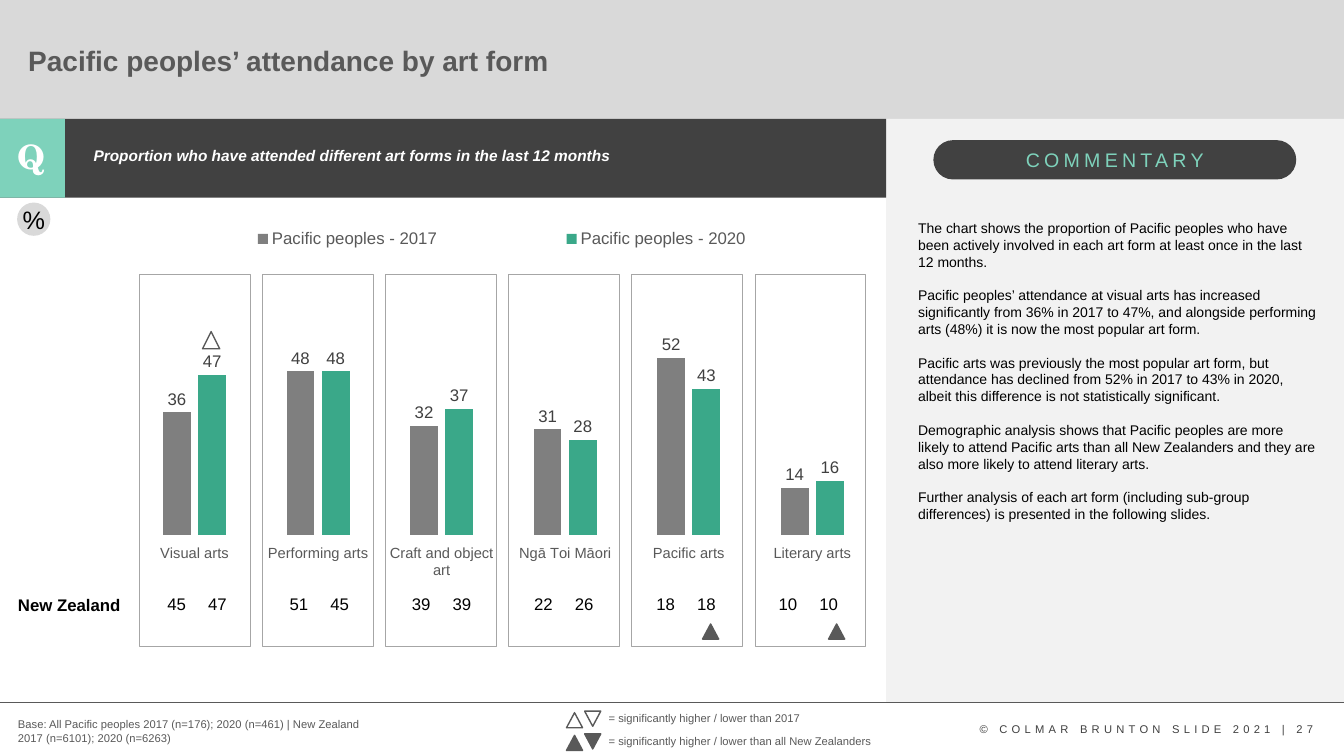
from dataclasses import dataclass

from lxml import etree
from pptx import Presentation
from pptx.chart.data import CategoryChartData
from pptx.dml.color import RGBColor
from pptx.enum.chart import XL_CHART_TYPE, XL_LABEL_POSITION, XL_LEGEND_POSITION, XL_TICK_LABEL_POSITION, XL_TICK_MARK
from pptx.enum.shapes import MSO_CONNECTOR, MSO_SHAPE
from pptx.enum.text import MSO_ANCHOR, PP_ALIGN
from pptx.oxml import parse_xml
from pptx.oxml.ns import nsdecls, qn
from pptx.util import Inches, Pt

RECT, OVAL = MSO_SHAPE.RECTANGLE, MSO_SHAPE.OVAL
PILL, TRIANGLE = MSO_SHAPE.ROUNDED_RECTANGLE, MSO_SHAPE.ISOSCELES_TRIANGLE
LEFT, CENTER = PP_ALIGN.LEFT, PP_ALIGN.CENTER
TOP, MIDDLE = MSO_ANCHOR.TOP, MSO_ANCHOR.MIDDLE
UNIT = Inches(0.1)
WIDTH, HEIGHT = 133.33, 75


@dataclass(frozen=True)
class Theme:
    font: str = "Arial"
    serif: str = "TeX Gyre Schola"
    white: str = "FFFFFF"
    black: str = "000000"
    dark: str = "414141"
    ink: str = "404040"
    muted: str = "595959"
    frame: str = "A6A6A6"
    band: str = "D9D9D9"
    panel: str = "F2F2F2"
    mint: str = "7ED2BB"
    grey_bar: str = "7F7F7F"
    green_bar: str = "3AA889"
    small: float = 8
    body: float = 10
    category: float = 10.5
    question: float = 11
    label: float = 12
    heading: float = 14
    percent: float = 18
    title: float = 20
    badge: float = 24


@dataclass(frozen=True)
class Box:
    x: float
    y: float
    w: float
    h: float

    def inner(self, x, y, w, h):
        return Box(self.x + x, self.y + y, w, h)

    def emu(self):
        return [round(v * UNIT) for v in (self.x, self.y, self.w, self.h)]


T = Theme()
CATEGORIES = ["Visual arts", "Performing arts", "Craft and object art", "Ngā Toi Māori", "Pacific arts", "Literary arts"]
SERIES = [
    ("Pacific peoples - 2017", [36, 48, 32, 31, 52, 14], T.grey_bar),
    ("Pacific peoples - 2020", [47, 48, 37, 28, 43, 16], T.green_bar),
]
NEW_ZEALAND = [(45, 47), (51, 45), (39, 39), (22, 26), (18, 18), (10, 10)]
COMMENTARY = [
    "The chart shows the proportion of Pacific peoples who have been actively involved in each art form at least once in the last 12 months.",
    "Pacific peoples’ attendance at visual arts has increased significantly from 36% in 2017 to 47%, and alongside performing arts (48%) it is now the most popular art form.",
    "Pacific arts was previously the most popular art form, but attendance has declined from 52% in 2017 to 43% in 2020, albeit this difference is not statistically significant.",
    "Demographic analysis shows that Pacific peoples are more likely to attend Pacific arts than all New Zealanders and they are also more likely to attend literary arts.",
    "Further analysis of each art form (including sub-group differences) is presented in the following slides.",
]


def style_font(font, size, color, bold=False, italic=False, name=T.font):
    font.name, font.size, font.bold, font.italic = name, Pt(size), bold, italic
    font.color.rgb = RGBColor.from_string(color)


def write(tf, text, size, color, align=LEFT, anchor=TOP, wrap=True, spacing=0, gap=0, **font):
    tf.text = text
    tf.word_wrap = wrap
    tf.vertical_anchor = anchor
    for i, p in enumerate(tf.paragraphs):
        p.alignment = align
        if i and gap:
            p.space_before = Pt(gap)
        for r in p.runs:
            style_font(r.font, size, color, **font)
            if spacing:
                r.font._element.set("spc", str(spacing * 100))


def add_text(s, box, *args, **style):
    tb = s.shapes.add_textbox(*box.emu())
    write(tb.text_frame, *args, **style)


def add_block(s, kind, box, fill=None, line=None, weight=0.5):
    sp = s.shapes.add_shape(kind, *box.emu())
    sp.shadow.inherit = False
    if fill:
        sp.fill.solid()
        sp.fill.fore_color.rgb = RGBColor.from_string(fill)
    else:
        sp.fill.background()
    if line:
        sp.line.color.rgb = RGBColor.from_string(line)
        sp.line.width = Pt(weight)
    else:
        sp.line.fill.background()
    return sp


def add_marker(s, box, fill, down=False):
    sp = add_block(s, TRIANGLE, box, fill, T.muted, 1)
    sp.rotation = 180 if down else 0


def add_header(s, box):
    add_block(s, RECT, box, T.band)
    title = s.shapes.title
    title._element.getparent().append(title._element)
    title.left, title.top, title.width, title.height = box.inner(1.8, 2.1, 111.9, 7.8).emu()
    write(title.text_frame, "Pacific peoples’ attendance by art form", T.title, T.muted, anchor=MIDDLE, bold=True)


def add_question(s, box):
    add_block(s, RECT, box, T.dark)
    add_block(s, RECT, box.inner(0, 0, 6.45, box.h), T.mint)
    add_text(s, box.inner(0.8, 1.2, 4.7, 5), "Q", T.badge, T.white, align=CENTER, bold=True, name=T.serif)
    add_text(s, box.inner(8.3, 2.2, 76, 4.6), "Proportion who have attended different art forms in the last 12 months",
             T.question, T.white, bold=True, italic=True)


def set_layout(parent, before, box, frame, inner=False):
    shares = zip("xywh", (box.x / frame.w, box.y / frame.h, box.w / frame.w, box.h / frame.h))
    target = '<c:layoutTarget val="inner"/>' if inner else ""
    modes = '<c:xMode val="edge"/><c:yMode val="edge"/>'
    values = "".join(f'<c:{k} val="{v:.4f}"/>' for k, v in shares)
    for old in parent.findall(qn("c:layout")):
        parent.remove(old)
    layout = parse_xml(f'<c:layout {nsdecls("c")}><c:manualLayout>{target}{modes}{values}</c:manualLayout></c:layout>')
    parent.insert(before, layout)


def add_bars(s, box):
    data = CategoryChartData()
    data.categories = CATEGORIES
    for name, values, _ in SERIES:
        data.add_series(name, values)
    chart = s.shapes.add_chart(XL_CHART_TYPE.COLUMN_CLUSTERED, *box.emu(), data).chart
    style_font(chart.font, T.body, T.black)
    chart.has_title = False
    chart.has_legend = True
    chart.legend.position = XL_LEGEND_POSITION.BOTTOM
    chart.legend.include_in_layout = False
    style_font(chart.legend.font, T.label, T.muted)
    set_layout(chart.legend._element, 1, Box(1.5, 4.5, 73, 3), box)
    plot = chart.plots[0]
    plot.gap_width, plot.overlap, plot.vary_by_categories = 219, -27, False
    set_layout(plot._element.getparent(), 0, Box(1.37, 1.53, 73.55, 33.9), box, inner=True)
    for series, (_, _, color) in zip(plot.series, SERIES):
        series.format.fill.solid()
        series.format.fill.fore_color.rgb = RGBColor.from_string(color)
        labels = series.data_labels
        labels.show_value = True
        labels.position = XL_LABEL_POSITION.OUTSIDE_END
        style_font(labels.font, T.label, T.ink)
    axis = chart.category_axis
    axis.major_tick_mark = XL_TICK_MARK.NONE
    axis.tick_label_position = XL_TICK_LABEL_POSITION.LOW
    axis.format.line.fill.background()
    style_font(axis.tick_labels.font, T.category, T.muted)
    axis = chart.value_axis
    axis.minimum_scale, axis.maximum_scale = 0, 100
    axis.has_major_gridlines = axis.visible = False


def add_benchmark(s, box):
    row = [""] + [v for pair in NEW_ZEALAND for v in (*pair, "")][:-1]
    table = s.shapes.add_table(1, len(row), *box.emu()).table
    table.first_row = table.horz_banding = False
    label_width = 13
    for i, value in enumerate(row):
        table.columns[i].width = round((label_width if i == 0 else (box.w - label_width) / (len(row) - 1)) * UNIT)
        cell = table.cell(0, i)
        cell.fill.background()
        write(cell.text_frame, str(value), T.label, T.black, align=CENTER)
    add_text(s, box.inner(-1.7, -0.1, 12.3, 3), "New Zealand", T.label, T.black, wrap=False, bold=True)


def add_results(s, box):
    add_bars(s, box.inner(11.8, -1.9, 76.3, 49.5))
    add_benchmark(s, box.inner(2.5, 39, 81.8, 4.1))
    badge = add_block(s, OVAL, box.inner(1.7, 0.5, 3.3, 3.3), T.band)
    tf = badge.text_frame
    tf.margin_left = tf.margin_right = tf.margin_top = tf.margin_bottom = 0
    write(tf, "%", T.percent, T.black, align=CENTER, anchor=MIDDLE, wrap=False)
    for i in range(len(CATEGORIES)):
        add_block(s, RECT, box.inner(13.8 + 12.22 * i, 7.6, 11, 36.9), line=T.frame)
    add_marker(s, box.inner(20.1, 13.3, 1.7, 1.7), T.white)
    for x in (69.7, 82.2):
        add_marker(s, box.inner(x, 42.3, 1.6, 1.5), T.muted)


def add_commentary(s, box):
    add_block(s, RECT, box, T.panel)
    pill = add_block(s, PILL, box.inner(4.7, 2.1, 36, 3.9), T.dark)
    pill.adjustments[0] = 0.5
    write(pill.text_frame, "COMMENTARY", T.heading, T.mint, align=CENTER, anchor=MIDDLE, spacing=3)
    add_text(s, box.inner(2.2, 9.5, 41.5, 38), "\n".join(COMMENTARY), T.body, T.black, gap=12)


def add_footer(s, box):
    x, y, w, _ = box.emu()
    rule = s.shapes.add_connector(MSO_CONNECTOR.STRAIGHT, x, y, x + w, y)
    rule.line.color.rgb = RGBColor.from_string(T.muted)
    rule.line.width = Pt(0.5)
    etree.SubElement(rule._element.spPr, qn("a:effectLst"))
    add_text(s, box.inner(0.8, 1, 37.4, 3.7),
             "Base: All Pacific peoples 2017 (n=176); 2020 (n=461) | New Zealand 2017 (n=6101); 2020 (n=6263)",
             T.small, T.muted)
    for i, (fill, group) in enumerate([(T.white, "2017"), (T.muted, "all New Zealanders")]):
        key = box.inner(56.2, 0.4 + 2.25 * i, 32, 2.4)
        add_text(s, key.inner(3.2, 0, 28.4, 2.4), f"= significantly higher / lower than {group}", T.small, T.muted)
        add_marker(s, key.inner(0, 0.6, 1.6, 1.5), fill)
        add_marker(s, key.inner(1.8, 0.45, 1.6, 1.5), fill, down=True)
    add_text(s, box.inner(96.2, 1.5, 36.1, 2.4), "© COLMAR BRUNTON SLIDE 2021 | 27", T.small, T.ink, spacing=3)


def main():
    prs = Presentation()
    prs.slide_width, prs.slide_height = round(WIDTH * UNIT), HEIGHT * UNIT
    s = prs.slides.add_slide(prs.slide_layouts[5])
    header, question, split, footer = 11.8, 7.8, 87.9, 69.7
    add_header(s, Box(0, 0, WIDTH, header))
    add_commentary(s, Box(split, header, WIDTH - split, footer - header))
    add_question(s, Box(0, header, split, question))
    add_results(s, Box(0, header + question, split, footer - header - question))
    add_footer(s, Box(0, footer, WIDTH, HEIGHT - footer))
    prs.save("out.pptx")


if __name__ == "__main__":
    main()
